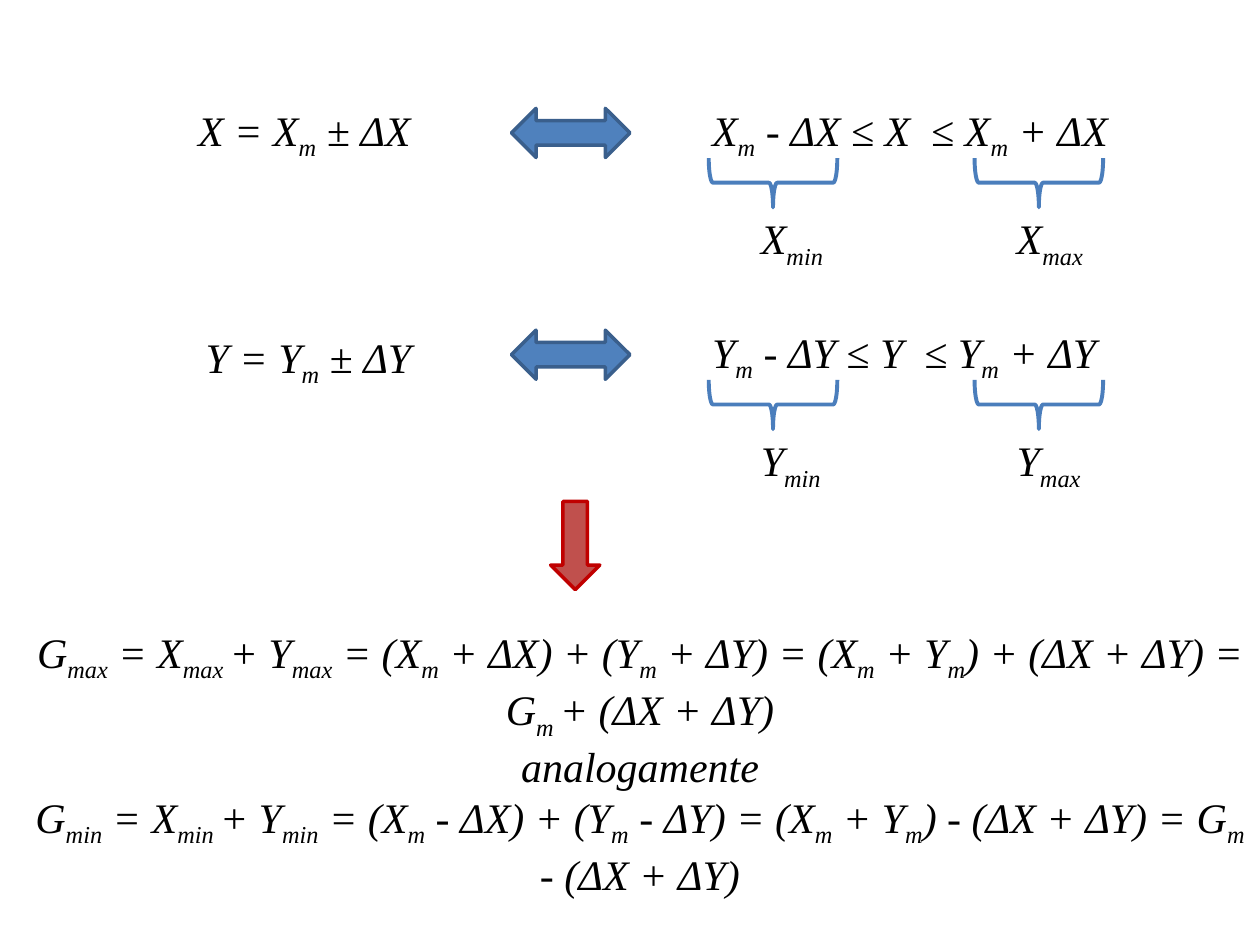
"""Build a slide on how absolute errors add up in a sum of two measures."""
from dataclasses import dataclass

from pptx import Presentation
from pptx.dml.color import RGBColor
from pptx.enum.shapes import MSO_SHAPE
from pptx.enum.text import PP_ALIGN
from pptx.util import Emu, Pt

SCALE = 9144
BLANK = 6
BOTH = MSO_SHAPE.LEFT_RIGHT_ARROW
DOWN = MSO_SHAPE.DOWN_ARROW
BRACE = MSO_SHAPE.LEFT_BRACE
LEFT = PP_ALIGN.LEFT
CENTER = PP_ALIGN.CENTER


@dataclass(frozen=True)
class Theme:
    """Hold the colours, font and sizes."""
    font: str = "Times New Roman"
    size: int = 24
    sub: int = -25000
    ink: str = "000000"
    blue: str = "4F81BD"
    edge: str = "3A5F8C"
    brace: str = "4B7EBC"
    red: str = "C0504D"
    rim: str = "C00000"
    thin: float = 2
    thick: float = 2.25


THEME = Theme()


def px(*values):
    """Turn lengths in px into EMU."""
    return [Emu(value * SCALE) for value in values]


def add_runs(para, text):
    """Add text run by run; parts between underscores are subscripts."""
    for index, part in enumerate(text.split("_")):
        if not part:
            continue
        run = para.add_run()
        run.text = part
        font = run.font
        font.name = THEME.font
        font.size = Pt(THEME.size)
        font.italic = True
        font.color.rgb = RGBColor.from_string(THEME.ink)
        if index % 2:
            run._r.get_or_add_rPr().set("baseline", str(THEME.sub))


def add_text(shapes, box, lines, align=LEFT):
    """Add a text box with one paragraph per line."""
    frame = shapes.add_textbox(*px(*box)).text_frame
    frame.word_wrap = True
    for index, line in enumerate(lines):
        para = frame.add_paragraph() if index else frame.paragraphs[0]
        para.alignment = align
        add_runs(para, line)


def add_form(shapes, kind, box, line, width, fill=None, turn=0):
    """Add a preset shape with a line and, if given, a fill."""
    shape = shapes.add_shape(kind, *px(*box))
    shape.shadow.inherit = False
    shape.rotation = turn
    if fill:
        shape.fill.solid()
        shape.fill.fore_color.rgb = RGBColor.from_string(fill)
    else:
        shape.fill.background()
    shape.line.color.rgb = RGBColor.from_string(line)
    shape.line.width = Pt(width)


def add_range(slide, name, top):
    """Add the arrow, the inequality and its two marked limits."""
    shapes = slide.shapes.add_group_shape().shapes
    add_form(shapes, BOTH, (406, top + 8, 94, 39),
             THEME.edge, THEME.thin, THEME.blue)
    text = f" {name}_m_ - Δ{name} ≤ {name}  ≤ {name}_m_ + Δ{name}"
    add_text(shapes, (547, top, 424, 50), [text])
    for end, left, width, brace in (("min", 594, 74, 594),
                                    ("max", 797, 78, 805)):
        add_text(shapes, (left, top + 86, width, 50), [f"{name}_{end}_"])
        add_form(shapes, BRACE, (brace, top + 16, 39, 102),
                 THEME.brace, THEME.thick, turn=270)


def sum_line(end, sign):
    """Return the formula for one limit of the sum."""
    return (f"G_{end}_ = X_{end} _+ Y_{end}_ = (X_m_ {sign} ΔX)"
            f" + (Y_m_ {sign} ΔY) = (X_m_ + Y_m_) {sign} (ΔX + ΔY)"
            f" = G_m _{sign} (ΔX + ΔY)")


def main():
    """Build and save the slide."""
    deck = Presentation()
    deck.slide_width, deck.slide_height = px(1000, 750)
    slide = deck.slides.add_slide(deck.slide_layouts[BLANK])
    for name, left, top, row in (("X", 139, 78, 78), ("Y", 145, 258, 254)):
        text = f" {name} = {name}_m_ ± Δ{name}"
        add_text(slide.shapes, (left, top, 222, 50), [text])
        add_range(slide, name, row)
    add_form(slide.shapes, DOWN, (437, 398, 39, 70),
             THEME.rim, THEME.thin, THEME.red)
    lines = [sum_line("max", "+"), "analogamente", sum_line("min", "-")]
    add_text(slide.shapes, (16, 492, 984, 252), lines, CENTER)
    deck.save("out.pptx")


if __name__ == "__main__":
    main()
